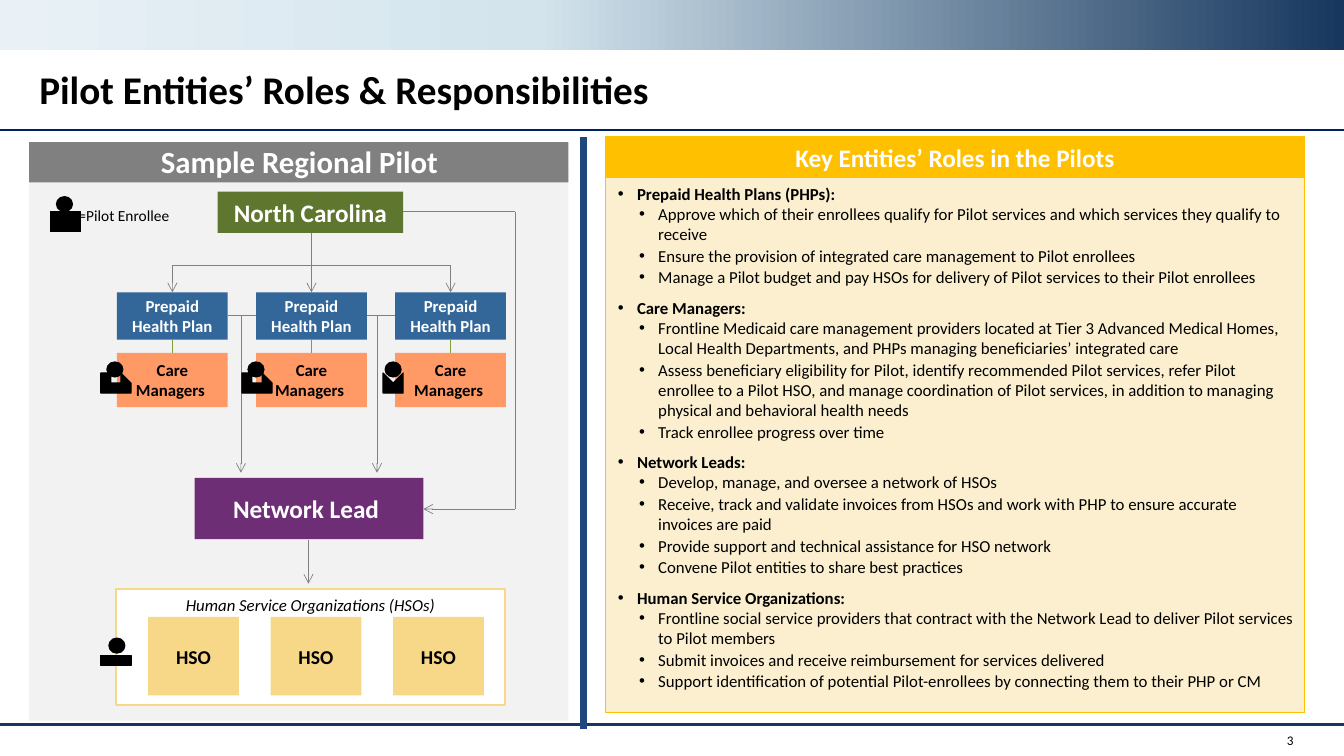
from copy import deepcopy
from lxml.etree import SubElement
from pptx import Presentation
from pptx.dml.color import RGBColor
from pptx.enum.shapes import MSO_CONNECTOR, MSO_SHAPE
from pptx.enum.text import MSO_ANCHOR, MSO_AUTO_SIZE, PP_ALIGN
from pptx.oxml.ns import qn
from pptx.util import Inches, Pt

hues = dict(black="000000", white="FFFFFF", navy="17375E", rule="002060", divide="1F497D",
            sky="D3E4ED", mist="E9F1F6", pale="F2F2F2", gray="808080", olive="5F762F",
            link="7F9E3F", blue="336699", plum="6D2E75", coral="FF9966", sand="F6D888",
            gold="FFC000", cream="FBEFCF")
theme = {name: RGBColor.from_string(code) for name, code in hues.items()}
theme.update(font="Calibri", title=28, banner=22, head=18, hso=14, text=12, key=11, page=9.4)

# The grid has square cells, a tenth of an inch wide
cell = Inches(0.1)
wide, high = 133.33, 75

deck = Presentation()
deck.slide_width, deck.slide_height = int(wide * cell), int(high * cell)
slide = deck.slides.add_slide(deck.slide_layouts[1])
shapes = slide.shapes


def box(x, y, w, h, fill=None, text="", size="text", ink="black", edge=None, width=1,
        bold=True, italic=False, align=PP_ALIGN.CENTER, anchor=MSO_ANCHOR.MIDDLE):
    place = [int(n * cell) for n in (x, y, w, h)]
    if fill:
        item = shapes.add_shape(MSO_SHAPE.RECTANGLE, *place)
        item.shadow.inherit = False
        item.fill.solid()
        item.fill.fore_color.rgb = theme[fill]
        if edge:
            item.line.color.rgb = theme[edge]
            item.line.width = Pt(width)
        else:
            item.line.fill.background()
    else:
        item = shapes.add_textbox(*place)
    if text:
        frame = item.text_frame
        frame.text = text
        frame.word_wrap = True
        frame.vertical_anchor = anchor
        para = frame.paragraphs[0]
        para.alignment = align
        font = para.runs[0].font
        font.name, font.size, font.color.rgb = theme["font"], Pt(theme[size]), theme[ink]
        font.bold, font.italic = bold, italic
    return item


def wire(x1, y1, x2, y2, arrow=False, ink="gray", width=0.5):
    ends = [int(n * cell) for n in (x1, y1, x2, y2)]
    line = shapes.add_connector(MSO_CONNECTOR.STRAIGHT, *ends)
    line.line.color.rgb = theme[ink]
    line.line.width = Pt(width)
    if arrow:
        SubElement(line.line._get_or_add_ln(), qn("a:tailEnd"), type="arrow")
    SubElement(line._element.spPr, qn("a:effectLst"))


# Top band and rules
band = box(0, 0, wide, 5, "navy")
band.fill.gradient()
band.fill.gradient_angle = 180
stops = band._element.spPr.find(".//" + qn("a:gsLst"))
stops.append(deepcopy(stops[-1]))
for stop, (spot, hue) in zip(band.fill.gradient_stops, [(0, "navy"), (0.6, "sky"), (1, "mist")]):
    stop.position, stop.color.rgb = spot, theme[hue]
wire(0, 71.9, wide, 71.9, ink="navy", width=2.25)
wire(0, 12.9, wide, 12.9, ink="rule", width=2)

# Title
title = shapes.title
title.left, title.top, title.width, title.height = [int(n * cell) for n in (2.9, 6.5, 114.4, 6)]
frame = title.text_frame
frame.text = "Pilot Entities’ Roles & Responsibilities"
frame.vertical_anchor = MSO_ANCHOR.TOP
frame.auto_size = MSO_AUTO_SIZE.NONE
para = frame.paragraphs[0]
para.alignment, para.line_spacing = PP_ALIGN.LEFT, 0.9
font = para.runs[0].font
font.name, font.size, font.bold = theme["font"], Pt(theme["title"]), True
font.color.rgb = theme["black"]

# Left panel
box(2.9, 16.2, 53.5, 55.3, "pale")
box(2.9, 14.1, 53.5, 4, "gray")
box(3, 13.7, 53.4, 4.7, None, "Sample Regional Pilot", "banner", "white", anchor=MSO_ANCHOR.TOP)
wire(57.9, 13.6, 57.9, 72.3, ink="divide", width=4.5)

# State to health plans
plans = [11.6 + 13.8 * i for i in range(3)]
mids = [x + 5.5 for x in plans]
wire(mids[1], 23.1, mids[1], 26.3)
wire(mids[0], 26.3, mids[2], 26.3)
for mid in mids:
    wire(mid, 26.3, mid, 29, True)
    wire(mid, 33.7, mid, 35, ink="link")

# Plans and state to network lead, lead to service groups
wire(plans[2], 31.3, plans[0] + 11, 31.3)
for x in (23.9, 37.4):
    wire(x, 31.3, x, 46.9, True)
wire(40, 21, 51.1, 21)
wire(51.1, 21, 51.1, 50.5)
wire(51.1, 50.5, 42, 50.5, True)
wire(30.6, 53.6, 30.6, 57.9, True)

# Chart boxes
box(21.6, 19, 18.4, 4.1, "olive", "North Carolina", "head", "white")
for x in plans:
    box(x, 29, 11, 4.7, "blue", "Prepaid Health Plan", ink="white")
    box(x, 35, 11, 5.4, "coral", "Care Managers ")
box(19.3, 47.4, 22.7, 6.1, "plum", "Network Lead ", "head", "white")
box(11.5, 58.4, 38.6, 11.5, "white", edge="sand", width=1.5)
box(11.5, 58.5, 38.6, 3, None, "Human Service Organizations (HSOs)", bold=False, italic=True,
    anchor=MSO_ANCHOR.TOP)
for i in range(3):
    box(14.7 + 12.15 * i, 61.2, 9, 7.8, "sand", "HSO", "hso")

# Enrollee icons: round head over sloped shoulders
torso = [(2.2, 1.3), (1.8, 1.6), (1.4, 1.7), (1, 1.6), (0.6, 1.3), (0.4, 1.5), (0.2, 1.7),
         (0.05, 2), (0, 2.4), (0, 3.1), (2.8, 3.1), (2.8, 2.4), (2.75, 2), (2.6, 1.7), (2.4, 1.5)]
for x, y in [(5, 19.5), (10, 35.9), (24, 35.9), (37.6, 35.9), (10.2, 63.3)]:
    head = shapes.add_shape(MSO_SHAPE.OVAL, *[int(n * cell) for n in (x + 0.6, y, 1.6, 1.5)])
    points = [(x + a, y + b) for a, b in torso]
    pen = shapes.build_freeform(*points[0], scale=cell)
    pen.add_line_segments(points[1:])
    for part in (head, pen.convert_to_shape()):
        part.shadow.inherit = False
        part.fill.solid()
        part.fill.fore_color.rgb = part.line.color.rgb = theme["black"]
box(6.8, 20, 15.6, 2.9, None, "=Pilot Enrollee", "key", bold=False, align=PP_ALIGN.LEFT,
    anchor=MSO_ANCHOR.TOP)

# Right panel
box(60.1, 17.6, 69.3, 53.1, "cream", edge="gold")
box(60.1, 13.6, 69.3, 4, "gold", "Key Entities’ Roles in the Pilots", "head", "white", edge="gold")

# Roles list
roles = {
    "Prepaid Health Plans (PHPs):": [
        "Approve which of their enrollees qualify for Pilot services and which services they qualify to receive",
        "Ensure the provision of integrated care management to Pilot enrollees",
        "Manage a Pilot budget and pay HSOs for delivery of Pilot services to their Pilot enrollees"],
    "Care Managers:": [
        "Frontline Medicaid care management providers located at Tier 3 Advanced Medical Homes, Local Health Departments, and PHPs managing beneficiaries’ integrated care",
        "Assess beneficiary eligibility for Pilot, identify recommended Pilot services, refer Pilot enrollee to a Pilot HSO, and manage coordination of Pilot services, in addition to managing physical and behavioral health needs",
        "Track enrollee progress over time"],
    "Network Leads:": [
        "Develop, manage, and oversee a network of HSOs",
        "Receive, track and validate invoices from HSOs and work with PHP to ensure accurate invoices are paid",
        "Provide support and technical assistance for HSO network",
        "Convene Pilot entities to share best practices"],
    "Human Service Organizations:": [
        "Frontline social service providers that contract with the Network Lead to deliver Pilot services to Pilot members",
        "Submit invoices and receive reimbursement for services delivered",
        "Support identification of potential Pilot-enrollees by connecting them to their PHP or CM"],
}
body = slide.placeholders[1]
shapes._spTree.append(body._element)  # bring the list in front of its panel
body.left, body.top, body.width, body.height = [int(n * cell) for n in (60.3, 17.7, 69.3, 52.1)]
frame = body.text_frame
frame.text = "\n".join(line for name, tasks in roles.items() for line in [name, *tasks])
frame.auto_size = MSO_AUTO_SIZE.NONE
for i, para in enumerate(frame.paragraphs):
    lead = para.text in roles
    para.level = 0 if lead else 1
    para.space_before = Pt(6.5 if lead and i else 0)
    para.space_after = Pt(0 if lead else 1)
    props = para._p.get_or_add_pPr()
    props.set("marL", str(Inches(0.19 if lead else 0.4)))
    props.set("indent", str(Inches(-0.19)))
    SubElement(props, qn("a:buFont"), typeface="Arial")
    SubElement(props, qn("a:buChar"), char="•")
    font = para.runs[0].font
    font.name, font.size, font.bold = theme["font"], Pt(theme["text"]), lead
    font.color.rgb = theme["black"]

# Page number
box(121.1, 71.9, 8.2, 3.1, None, "3", "page", bold=False, align=PP_ALIGN.RIGHT)

deck.save("out.pptx")
